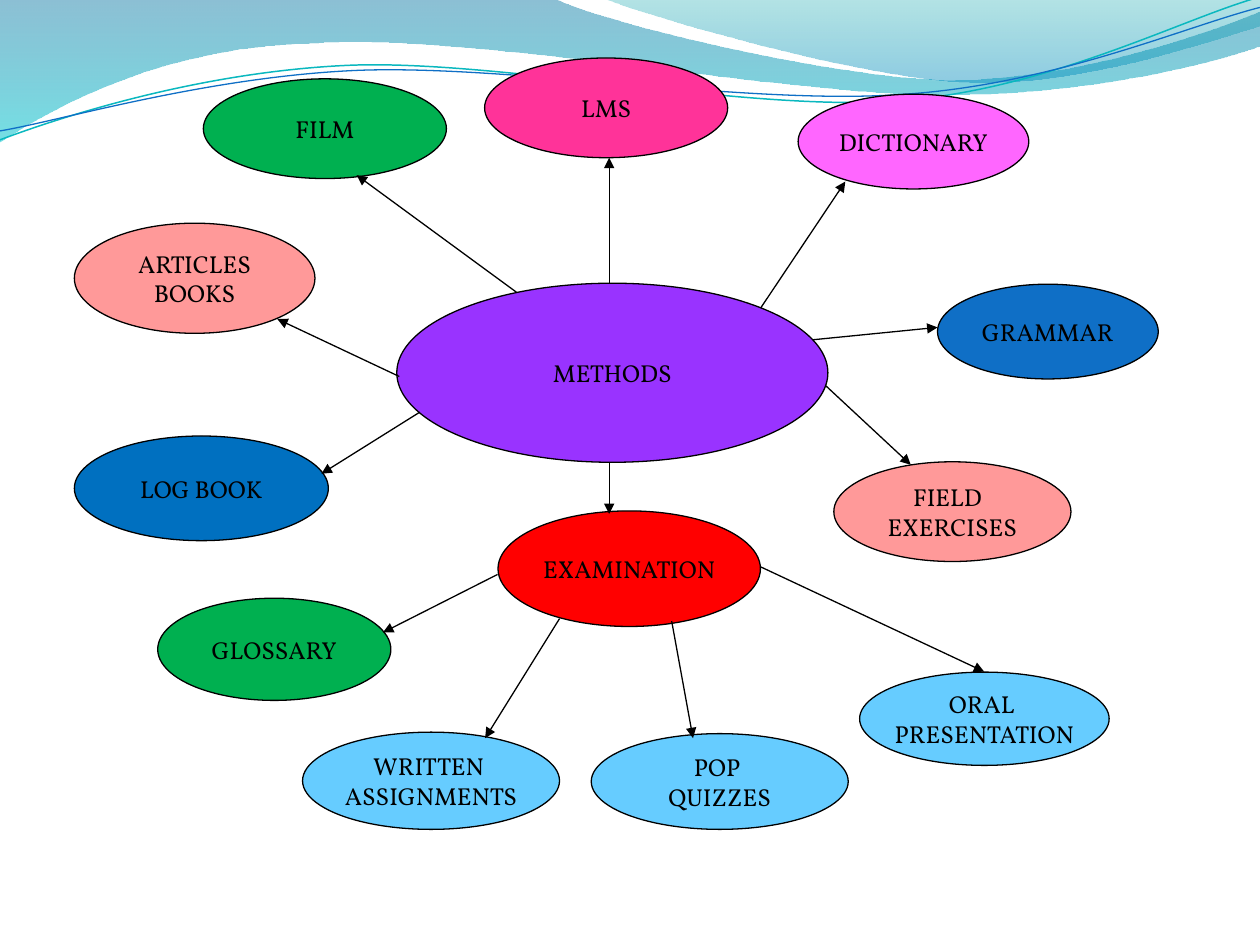
import lxml.etree
import pptx
import pptx.dml.color
import pptx.enum.shapes
import pptx.enum.text
import pptx.oxml
import pptx.oxml.ns
import pptx.util
from pptx.oxml.ns import qn
from pptx.util import Cm

COLORS = {
    "black": "000000", "purple": "9933FF", "red": "FF0000", "green": "00B050",
    "sky": "66CCFF", "rose": "FF3399", "salmon": "FF9999", "orchid": "FF66FF",
    "blue": "0F6FC6", "navy": "0070C0", "teal": "0AB8BF",
    "wave_blue": "0074A1", "wave_cyan": "00C6CF",
    "crest_teal": "00A1A9", "crest_blue": "008BBF",
}


def rgb(color):
    return pptx.dml.color.RGBColor.from_string(COLORS[color])


class MindMap:
    font = "Vollkorn"
    size = 14
    line_width = 0.75

    def __init__(self, slide):
        self.slide = slide

    def outline(self, segments, close):
        """Start point, then lines (x, y) and Bezier curves (three x, y pairs)."""
        points = [(Cm(segment[i]), Cm(segment[i + 1]))
                  for segment in segments for i in range(0, len(segment), 2)]
        builder = self.slide.shapes.build_freeform(*points[0], scale=1.0)
        builder.add_line_segments(points[1:], close=close)
        shape = builder.convert_to_shape()
        shape.shadow.inherit = False
        # Merge the three line steps of each curve into one Bezier
        steps = iter(list(shape._element.iter(qn("a:lnTo"))))
        for segment in segments[1:]:
            step = next(steps)
            if len(segment) == 6:
                step.addprevious(lxml.etree.Element(qn("a:cubicBezTo")))
                curve = step.getprevious()
                for part in (step, next(steps), next(steps)):
                    curve.append(part[0])
                    part.getparent().remove(part)
        return shape

    def wave(self, segments, *stops):
        """Filled wave; each stop is (color, opacity in percent), top to bottom."""
        shape = self.outline(segments, True)
        shape.line.fill.background()
        shape.fill.gradient()
        shape.fill.gradient_angle = 270
        for stop, (color, _) in zip(shape.fill.gradient_stops, stops):
            stop.color.rgb = rgb(color)
        tints = shape._element.spPr.iter(qn("a:srgbClr"))
        for tint, (_, opacity) in zip(tints, stops):
            alpha = pptx.oxml.parse_xml(
                f'<a:alpha {pptx.oxml.ns.nsdecls("a")} val="{opacity * 1000}"/>')
            tint.append(alpha)

    def ripple(self, segments, color, width):
        shape = self.outline(segments, False)
        shape.rotation = -2.7
        shape.fill.background()
        shape.line.color.rgb = rgb(color)
        shape.line.width = pptx.util.Pt(width)

    def bubble(self, text, color, left, top, width, height):
        shape = self.slide.shapes.add_shape(
            pptx.enum.shapes.MSO_SHAPE.OVAL, Cm(left), Cm(top), Cm(width), Cm(height))
        shape.shadow.inherit = False
        shape.fill.solid()
        shape.fill.fore_color.rgb = rgb(color)
        shape.line.color.rgb = rgb("black")
        shape.line.width = pptx.util.Pt(self.line_width)
        frame = shape.text_frame
        frame.word_wrap = False
        frame.vertical_anchor = pptx.enum.text.MSO_ANCHOR.MIDDLE
        frame.text = text
        for paragraph in frame.paragraphs:
            paragraph.alignment = pptx.enum.text.PP_ALIGN.CENTER
            paragraph.font.name = self.font
            paragraph.font.size = pptx.util.Pt(self.size)
            paragraph.font.color.rgb = rgb("black")

    def arrow(self, x1, y1, x2, y2):
        connector = self.slide.shapes.add_connector(
            pptx.enum.shapes.MSO_CONNECTOR.STRAIGHT, Cm(x1), Cm(y1), Cm(x2), Cm(y2))
        connector.line.color.rgb = rgb("black")
        connector.line.width = pptx.util.Pt(self.line_width)
        namespace = pptx.oxml.ns.nsdecls("a")
        connector.line._get_or_add_ln().append(
            pptx.oxml.parse_xml(f'<a:tailEnd {namespace} type="triangle"/>'))
        connector._element.spPr.append(
            pptx.oxml.parse_xml(f"<a:effectLst {namespace}/>"))


def main():
    deck = pptx.Presentation()
    deck.slide_width, deck.slide_height = Cm(25.4), Cm(19.05)
    methods_map = MindMap(deck.slides.add_slide(deck.slide_layouts[6]))

    # Waves along the top edge
    methods_map.wave(
        [(0, 0),
         (11.18, -0.03),
         (12.09, 0.43, 16.87, 1.6, 19.25, 1.6),
         (21.67, 1.6, 24.33, 0.66, 25.4, 0.23),
         (25.43, 0.91),
         (24.97, 1.12, 22.1, 1.93, 18.95, 1.91),
         (15.8, 1.91, 9.7, 0.71, 6.53, 0.86),
         (3.28, 0.91, 1.17, 2.11, -0.03, 2.87)],
        ("wave_blue", 45), ("wave_cyan", 55))
    methods_map.wave(
        [(12.17, -0.03),
         (12.93, 0.28, 17.32, 1.57, 19.53, 1.65),
         (21.74, 1.75, 24.41, 0.81, 25.4, 0.53),
         (25.4, 0)],
        ("crest_teal", 30), ("crest_blue", 45))
    methods_map.ripple(
        [(-0.05, 2.22),
         (1.19, 1.82, 4.02, 1.04, 7.05, 1.05),
         (10.05, 1.07, 15.02, 2.37, 18.08, 2.29),
         (21.13, 2.2, 23.86, 0.91, 25.41, 0.55)],
        "teal", 0.85)
    methods_map.ripple(
        [(-0.04, 2.04),
         (1.16, 1.9, 4.17, 1.15, 7.2, 1.16),
         (10.25, 1.18, 15.13, 2.25, 18.19, 2.16),
         (21.22, 2.11, 23.93, 1.06, 25.45, 0.75)],
        "blue", 0.75)

    # Methods and examination, with their branches
    for bubble in (
        ("METHODS", "purple", 8, 5.71, 8.69, 3.61),
        ("EXAMINATION", "red", 10.04, 10.3, 5.29, 2.33),
        ("GLOSSARY", "green", 3.18, 12.06, 4.7, 2.06),
        ("POP \nQUIZZES", "sky", 11.92, 14.79, 5.18, 1.93),
        ("ORAL \nPRESENTATION", "sky", 17.33, 13.55, 5.03, 1.88),
        ("WRITTEN \nASSIGNMENTS", "sky", 6.1, 14.76, 5.18, 1.96),
        ("LMS", "rose", 9.77, 1.17, 4.9, 2.01),
        ("ARTICLES\nBOOKS", "salmon", 1.5, 4.5, 4.85, 2.22),
        ("FIELD  \nEXERCISES", "salmon", 16.81, 9.31, 4.78, 2.01),
        ("FILM", "green", 4.1, 1.59, 4.9, 2.01),
        ("DICTIONARY", "orchid", 16.09, 1.9, 4.65, 1.91),
        ("GRAMMAR", "blue", 18.9, 5.73, 4.45, 1.91),
    ):
        methods_map.bubble(*bubble)

    # Arrows to each branch
    for arrow in (
        (12.28, 5.72, 12.28, 3.18),    # methods to LMS
        (10.41, 5.89, 7.19, 3.53),     # film
        (8.05, 7.59, 5.59, 6.43),      # articles, books
        (12.28, 9.32, 12.28, 10.36),   # examination
        (16.64, 7.77, 18.36, 9.37),    # field exercises
        (15.34, 6.2, 17.04, 3.66),     # dictionary
        (16.38, 6.85, 18.9, 6.6),      # grammar
        (10.03, 11.58, 7.72, 12.75),   # examination to glossary
        (11.28, 12.47, 9.78, 14.88),   # written assignments
        (13.54, 12.52, 13.97, 14.88),  # pop quizzes
        (15.34, 11.43, 19.84, 13.54),  # oral presentation
    ):
        methods_map.arrow(*arrow)

    # Log book
    methods_map.bubble("LOG BOOK", "navy", 1.5, 8.79, 5.12, 2.11)
    methods_map.arrow(8.46, 8.31, 6.48, 9.55)

    deck.save("out.pptx")


if __name__ == "__main__":
    main()
